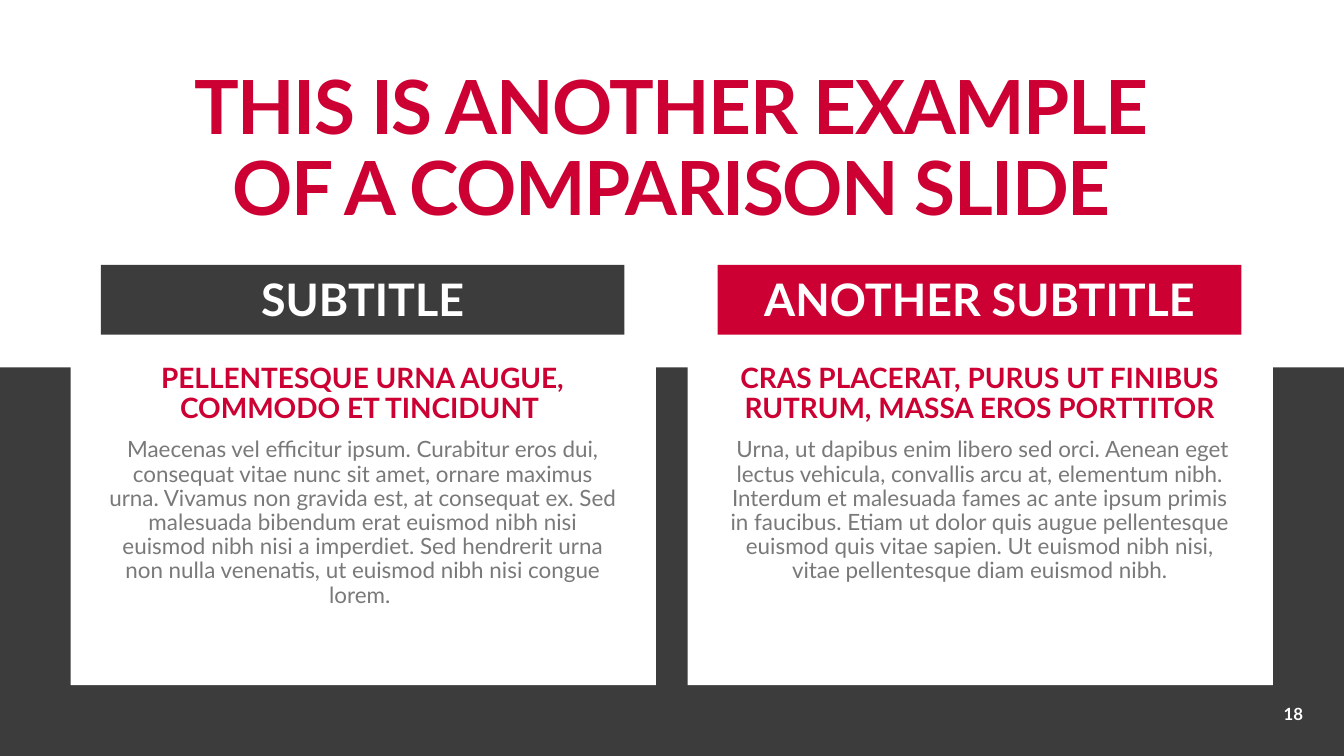
"""Builds a two-column comparison slide with a title and captioned cards."""
from pptx import Presentation
from pptx.dml.color import RGBColor
from pptx.enum.shapes import MSO_SHAPE
from pptx.enum.text import MSO_ANCHOR, MSO_AUTO_SIZE, PP_ALIGN
from pptx.util import Pt

RECTANGLE = MSO_SHAPE.RECTANGLE
TOP, BOTTOM = MSO_ANCHOR.TOP, MSO_ANCHOR.BOTTOM
CENTER, RIGHT = PP_ALIGN.CENTER, PP_ALIGN.RIGHT
NO_AUTOFIT = MSO_AUTO_SIZE.NONE

FONT = "Lato"
RED, DARK, GRAY, WHITE = "CC0033", "3C3C3C", "797979", "FFFFFF"
WIDTH, HEIGHT = 1440, 810
COLUMN_STEP = 661

COLUMNS = [
    (
        "SUBTITLE", DARK,
        "PELLENTESQUE URNA AUGUE, COMMODO ET TINCIDUNT ",
        "Maecenas vel efficitur ipsum. Curabitur eros dui, consequat vitae nunc "
        "sit amet, ornare maximus urna. Vivamus non gravida est, at consequat ex. "
        "Sed malesuada bibendum erat euismod nibh nisi euismod nibh nisi a "
        "imperdiet. Sed hendrerit urna non nulla venenatis, ut euismod nibh nisi "
        "congue lorem. ",
    ),
    (
        "ANOTHER SUBTITLE", RED,
        "CRAS PLACERAT, PURUS UT FINIBUS RUTRUM, MASSA EROS PORTTITOR",
        " Urna, ut dapibus enim libero sed orci. Aenean eget lectus vehicula, "
        "convallis arcu at, elementum nibh. Interdum et malesuada fames ac ante "
        "ipsum primis in faucibus. Etiam ut dolor quis augue pellentesque euismod "
        "quis vitae sapien. Ut euismod nibh nisi, vitae pellentesque diam euismod "
        "nibh.",
    ),
]


def color(hex_code):
    return RGBColor.from_string(hex_code)


class ComparisonSlide:
    """Holds the slide and the shared text style."""

    def __init__(self, slide):
        self.slide = slide

    def frame(self, shape, margin_x=0, margin_y=0, anchor=TOP):
        frame = shape.text_frame
        frame.word_wrap = True
        frame.auto_size = NO_AUTOFIT
        frame.vertical_anchor = anchor
        frame.margin_left = frame.margin_right = Pt(margin_x)
        frame.margin_top = frame.margin_bottom = Pt(margin_y)
        return frame

    def style(self, paragraph, size, ink, bold=True, before=0, align=CENTER):
        paragraph.alignment = align
        paragraph.line_spacing = 0.9
        paragraph.space_before = Pt(before)
        for run in paragraph.runs:
            run.font.name = FONT
            run.font.size = Pt(size)
            run.font.bold = bold
            run.font.color.rgb = color(ink)

    def title(self, text, left, top, width, height):
        title = self.slide.shapes.title
        title.left, title.top = Pt(left), Pt(top)
        title.width, title.height = Pt(width), Pt(height)
        frame = self.frame(title)
        frame.text = text
        heading = frame.paragraphs[0]
        self.style(heading, 80, RED)
        for run in heading.runs:
            run._r.get_or_add_rPr().set("spc", "-150")

    def panel(self, left, top, width, height, fill):
        panel = self.slide.shapes.add_shape(
            RECTANGLE, Pt(left), Pt(top), Pt(width), Pt(height))
        panel.shadow.inherit = False
        panel.fill.solid()
        panel.fill.fore_color.rgb = color(fill)
        panel.line.fill.background()
        return panel

    def banner(self, text, left, top, width, height, fill):
        banner = self.panel(left, top, width, height, fill)
        frame = self.frame(banner, 7.2, 14.4)
        frame.text = text
        self.style(frame.paragraphs[0], 48, WHITE)

    def textbox(self, left, top, width, height):
        return self.slide.shapes.add_textbox(
            Pt(left), Pt(top), Pt(width), Pt(height))

    def copy_block(self, lead, body, left, top, width, height):
        frame = self.frame(self.textbox(left, top, width, height), 7.2, 3.6)
        frame.text = f"{lead}\n{body}"
        lead_paragraph, body_paragraph = frame.paragraphs
        self.style(lead_paragraph, 30, RED, before=7.5)
        self.style(body_paragraph, 24, GRAY, bold=False, before=15)

    def page_number(self, number, left, top, width, height):
        frame = self.frame(self.textbox(left, top, width, height), anchor=BOTTOM)
        frame.text = number
        self.style(frame.paragraphs[0], 18, WHITE, align=RIGHT)


def main():
    deck = Presentation()
    deck.slide_width, deck.slide_height = Pt(WIDTH), Pt(HEIGHT)
    page = ComparisonSlide(deck.slides.add_slide(deck.slide_layouts[5]))

    page.panel(0, 393.5, WIDTH, HEIGHT - 393.5, DARK)
    page.page_number("18", 1314.7, 728.6, 81.4, 47.5)
    page.title("THIS IS ANOTHER EXAMPLE\vOF A COMPARISON SLIDE",
               73.5, 75, 1292.5, 147)
    for index, (subtitle, fill, lead, body) in enumerate(COLUMNS):
        offset = index * COLUMN_STEP
        page.panel(75.8 + offset, 255, 627, 479, WHITE)
        page.banner(subtitle, 108 + offset, 283.7, 561, 75, fill)
        page.copy_block(lead, body, 108 + offset, 386.6, 561, 313)

    deck.save("out.pptx")


if __name__ == "__main__":
    main()
